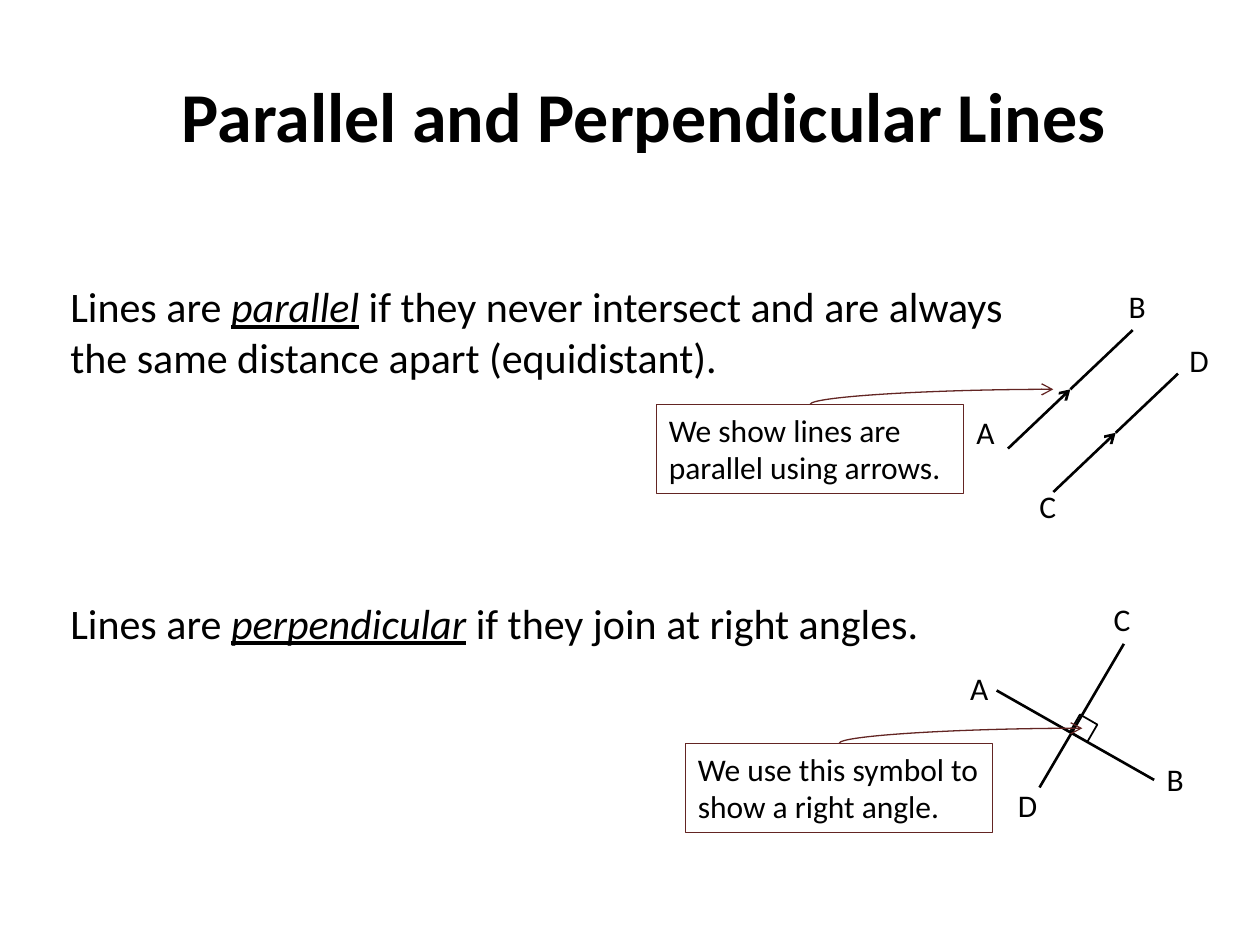
from lxml import etree
from pptx import Presentation
from pptx.dml.color import RGBColor
from pptx.enum.shapes import MSO_CONNECTOR, MSO_SHAPE
from pptx.enum.text import MSO_ANCHOR, PP_ALIGN
from pptx.oxml.ns import qn
from pptx.util import Inches, Pt

STRAIGHT, CURVE = MSO_CONNECTOR.STRAIGHT, MSO_CONNECTOR.CURVE
RECT = MSO_SHAPE.RECTANGLE
TOP, MIDDLE = MSO_ANCHOR.TOP, MSO_ANCHOR.MIDDLE
LEFT, CENTER = PP_ALIGN.LEFT, PP_ALIGN.CENTER
FONT = "Calibri"
COLORS = {"ink": "000000", "note": "632523"}
NOTE_W, NOTE_H = 2.44, 0.71
REACH, RISE = 1.93, 0.12


def color(name):
    return RGBColor.from_string(COLORS[name])


def add_run(p, text, size, bold=False, emphasis=False):
    r = p.add_run()
    r.text = text
    r.font.name, r.font.size = FONT, Pt(size)
    r.font.bold, r.font.italic, r.font.underline = bold, emphasis, emphasis
    r.font.color.rgb = color("ink")


def set_line(s, name, width):
    s.line.color.rgb = color(name)
    s.line.width = Pt(width)


def add_line(shapes, start, end, kind=STRAIGHT, name="ink", width=1.5, arrow=False):
    c = shapes.add_connector(kind, *(Inches(v) for v in (*start, *end)))
    set_line(c, name, width)
    if arrow:
        etree.SubElement(c.line._get_or_add_ln(), qn("a:tailEnd"), type="arrow")
    etree.SubElement(c._element.spPr, qn("a:effectLst"))
    return c


def add_outline(shapes, x, y, w, h, name, width):
    s = shapes.add_shape(RECT, Inches(x), Inches(y), Inches(w), Inches(h))
    s.shadow.inherit = False
    s.fill.background()
    set_line(s, name, width)
    return s


def add_labels(shapes, x, y, labels):
    for letter, dx, dy in labels:
        s = shapes.add_textbox(Inches(x + dx), Inches(y + dy), Inches(0.35), Inches(0.4))
        s.text_frame.word_wrap = False
        add_run(s.text_frame.paragraphs[0], letter, 18)


def add_title(slide, x, y, w, h):
    s = slide.shapes.title
    s.left, s.top, s.width, s.height = (Inches(v) for v in (x, y, w, h))
    tf = s.text_frame
    tf.word_wrap, tf.vertical_anchor = False, MIDDLE
    tf.paragraphs[0].alignment = CENTER
    add_run(tf.paragraphs[0], "Parallel and Perpendicular Lines", 40, bold=True)


def add_definition(slide, x, y, w, h, term, rest):
    s = slide.shapes.add_textbox(Inches(x), Inches(y), Inches(w), Inches(h))
    s.text_frame.word_wrap = True
    p = s.text_frame.paragraphs[0]
    add_run(p, "Lines are ", 24)
    add_run(p, term, 24, emphasis=True)
    add_run(p, rest, 24)


def add_note(slide, x, y, text):
    """Boxed note with a curved arrow that leaves its top centre."""
    s = add_outline(slide.shapes, x, y, NOTE_W, NOTE_H, "note", 0.75)
    tf = s.text_frame
    tf.word_wrap, tf.vertical_anchor = True, TOP
    tf.paragraphs[0].alignment = LEFT
    add_run(tf.paragraphs[0], text, 18)

    # The arrow is laid out upright about its centre, then turned a quarter.
    cx, cy = x + NOTE_W / 2 + REACH / 2, y - RISE / 2
    c = add_line(slide.shapes, (cx + RISE / 2, cy + REACH / 2),
                 (cx - RISE / 2, cy - REACH / 2), CURVE, "note", 0.75, arrow=True)
    c._element.spPr.find(qn("a:xfrm")).set("rot", str(90 * 60000))
    c._element.spPr.find(qn("a:prstGeom")).set("prst", "curvedConnector2")


def add_parallel_figure(slide, x, y):
    shapes = slide.shapes.add_group_shape().shapes
    add_labels(shapes, x, y, [("B", 1.21, 0), ("A", 0, 1), ("C", 0.5, 1.59), ("D", 1.69, 0.43)])
    half_w, half_h = 0.495, 0.47
    for dx, dy in ((0.35, 1.33), (0.71, 1.675)):
        start = (x + dx, y + dy)
        middle = (start[0] + half_w, start[1] - half_h)
        end = (middle[0] + half_w, middle[1] - half_h)
        add_line(shapes, start, middle, arrow=True)
        add_line(shapes, middle, end)


def add_perpendicular_figure(slide, x, y):
    shapes = slide.shapes.add_group_shape().shapes
    add_line(shapes, (x + 0.65, y + 1.54), (x + 1.32, y + 0.4))
    add_line(shapes, (x + 0.31, y + 0.77), (x + 1.56, y + 1.48))
    add_labels(shapes, x, y, [("A", 0, 0.55), ("B", 1.56, 1.27), ("C", 1.14, 0), ("D", 0.38, 1.48)])
    corner = add_outline(shapes, x + 0.92, y + 0.99, 0.16, 0.16, "ink", 1)
    corner.rotation = 30


def main():
    prs = Presentation()
    prs.slide_width, prs.slide_height = Inches(10), Inches(7.5)
    slide = prs.slides.add_slide(prs.slide_layouts[5])

    add_title(slide, 1.3, 0.52, 7.62, 0.77)
    add_definition(slide, 0.46, 2.18, 8.03, 0.91, "parallel",
                   " if they never intersect and are always the same distance apart (equidistant).")
    add_parallel_figure(slide, 7.65, 2.23)
    add_note(slide, 5.21, 3.21, "We show lines are parallel using arrows.")
    add_definition(slide, 0.46, 4.69, 8.03, 0.5, "perpendicular",
                   " if they join at right angles.")
    add_perpendicular_figure(slide, 7.6, 4.71)
    add_note(slide, 5.44, 5.9, "We use this symbol to show a right angle.")
    prs.save("out.pptx")


if __name__ == "__main__":
    main()
